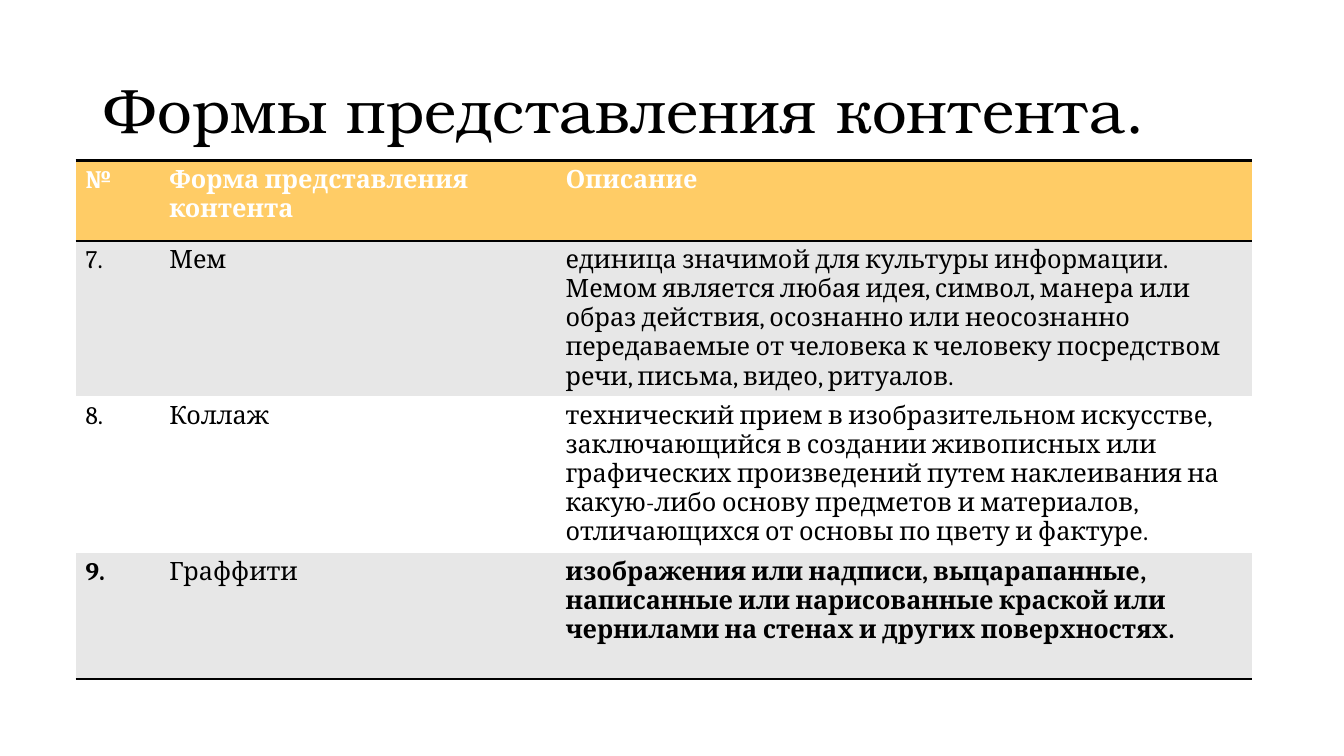
from lxml import etree
from pptx import Presentation
from pptx.dml.color import RGBColor
from pptx.enum.text import MSO_ANCHOR, PP_ALIGN
from pptx.oxml.ns import qn
from pptx.util import Inches, Pt

# Content
TITLE = "Формы представления контента."
HEADER = ("№", "Форма представления контента", "Описание")
FORMS = [
    ("7.", "Мем",
     "единица значимой для культуры информации. Мемом является любая идея, "
     "символ, манера или образ действия, осознанно или неосознанно передаваемые "
     "от человека к человеку посредством речи, письма, видео, ритуалов."),
    ("8.", "Коллаж",
     "технический прием в изобразительном искусстве,\n"
     "заключающийся в создании живописных или графических произведений путем "
     "наклеивания на какую-либо основу предметов и материалов, отличающихся от "
     "основы по цвету и фактуре."),
    ("9.", "Граффити",
     "изображения или надписи, выцарапанные, написанные или нарисованные краской "
     "или чернилами на стенах и других поверхностях."),
]
BOLD_CELLS = {(3, 0), (3, 2)}

# Layout and style
COLUMN_WIDTHS = (0.83, 3.93, 6.91)
ROW_HEIGHTS = (0.8, 1.54, 1.55, 1.25)
TITLE_FONT = "TeX Gyre Bonum"
TABLE_FONT = "Cambria"
BLACK = RGBColor(0, 0, 0)
WHITE = RGBColor(0xFF, 0xFF, 0xFF)
AMBER = RGBColor(0xFF, 0xCC, 0x66)
GREY = RGBColor(0xE7, 0xE7, 0xE7)
PLAIN_TABLE_STYLE = "{2D5ABB26-0587-4C30-8999-92F81FD0307C}"
LEFT, MIDDLE = PP_ALIGN.LEFT, MSO_ANCHOR.MIDDLE


def format_text(text_frame, font_name, size, color, bold):
    for paragraph in text_frame.paragraphs:
        paragraph.alignment = LEFT
        for run in paragraph.runs:
            run.font.name = font_name
            run.font.size = Pt(size)
            run.font.color.rgb = color
            run.font.bold = bold


def add_border(cell, side):
    properties = cell._tc.get_or_add_tcPr()
    line = etree.SubElement(properties, qn("a:" + side), w=str(Pt(2)))
    fill = etree.SubElement(line, qn("a:solidFill"))
    etree.SubElement(fill, qn("a:srgbClr"), val=str(BLACK))


prs = Presentation()
prs.slide_width, prs.slide_height = Inches(13.33), Inches(7.5)
slide = prs.slides.add_slide(prs.slide_layouts[5])

# Title
title = slide.shapes.title
title.left, title.top = Inches(0.92), Inches(0.4)
title.width, title.height = Inches(11.5), Inches(1.45)
title.text_frame.text = TITLE
title.text_frame.vertical_anchor = MIDDLE
title.text_frame.paragraphs[0].line_spacing = 0.9
format_text(title.text_frame, TITLE_FONT, 44, BLACK, False)

# Table of content forms
rows = [HEADER, *FORMS]
frame = slide.shapes.add_table(
    len(rows), len(HEADER), Inches(0.75), Inches(1.59),
    Inches(sum(COLUMN_WIDTHS)), Inches(sum(ROW_HEIGHTS)))
table = frame.table
frame._element.find(".//" + qn("a:tableStyleId")).text = PLAIN_TABLE_STYLE
for column, width in zip(table.columns, COLUMN_WIDTHS):
    column.width = Inches(width)
for row, height in zip(table.rows, ROW_HEIGHTS):
    row.height = Inches(height)

for r, row in enumerate(rows):
    is_header = r == 0
    for c, text in enumerate(row):
        cell = table.cell(r, c)
        cell.text_frame.text = text
        format_text(cell.text_frame, TABLE_FONT, 18,
                    WHITE if is_header else BLACK,
                    is_header or (r, c) in BOLD_CELLS)
        # Rules above and below the header and under the last row
        if is_header:
            add_border(cell, "lnT")
        if is_header or r == len(rows) - 1:
            add_border(cell, "lnB")
        cell.fill.solid()
        cell.fill.fore_color.rgb = AMBER if is_header else GREY if r % 2 else WHITE

prs.save("out.pptx")
